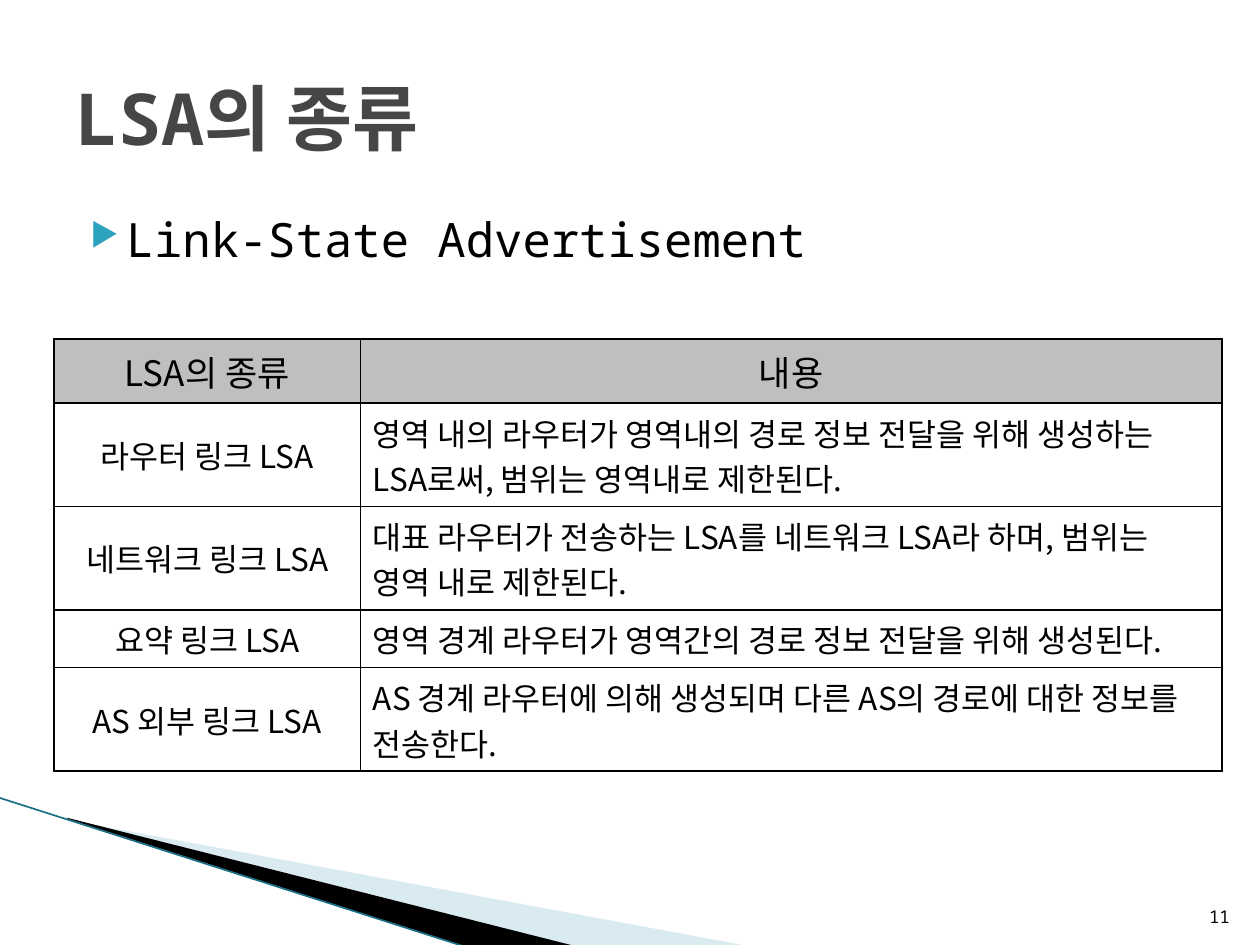
from lxml import etree
from pptx import Presentation
from pptx.dml.color import RGBColor
from pptx.enum.shapes import MSO_CONNECTOR
from pptx.enum.text import MSO_ANCHOR, PP_ALIGN
from pptx.oxml.ns import qn
from pptx.util import Inches, Pt

STRAIGHT = MSO_CONNECTOR.STRAIGHT
TOP, MIDDLE, BOTTOM = MSO_ANCHOR.TOP, MSO_ANCHOR.MIDDLE, MSO_ANCHOR.BOTTOM
LEFT, CENTER, RIGHT = PP_ALIGN.LEFT, PP_ALIGN.CENTER, PP_ALIGN.RIGHT

THEME = {
    "mono": "Noto Sans Mono", "korean": "Noto Sans CJK KR",
    "ink": "000000", "title": "464646", "bullet": "2DA2BF",
    "header": "BFBFBF", "paper": "FFFFFF", "pale": "A0CBDC", "edge": "1B7085",
    "title_size": 41, "body_size": 27, "header_size": 20, "cell_size": 18,
    "number_size": 10,
}

TITLE = "LSA의 종류"
BODY = "Link-State Advertisement"
PAGE_NUMBER = "11"
LSA_ROWS = [
    ("LSA의 종류", "내용"),
    ("라우터 링크 LSA",
     "영역 내의 라우터가 영역내의 경로 정보 전달을 위해 생성하는 LSA로써, 범위는 영역내로 제한된다."),
    ("네트워크 링크 LSA",
     "대표 라우터가 전송하는 LSA를 네트워크 LSA라 하며, 범위는 영역 내로 제한된다."),
    ("요약 링크 LSA",
     "영역 경계 라우터가 영역간의 경로 정보 전달을 위해 생성된다."),
    ("AS 외부 링크 LSA",
     "AS 경계 라우터에 의해 생성되며 다른 AS의 경로에 대한 정보를 전송한다."),
]
COLUMN_WIDTHS = (2.43, 6.84)
ROW_HEIGHTS = (0.51, 0.82, 0.82, 0.46, 0.82)
WEDGES = [
    ("pale", 40, [(0.55, 6.51), (5.95, 7.51), (4.56, 7.51), (0.55, 6.5)]),
    ("ink", 100, [(0.53, 6.49), (4.57, 7.51), (3.72, 7.52), (0.54, 6.5)]),
]


def color(name):
    return RGBColor.from_string(THEME[name])


def add_xml(parent, tag, **attributes):
    return etree.SubElement(parent, qn(tag), attributes)


def write(frame, text, font, size, ink="ink", bold=False, align=LEFT):
    frame.text = text
    paragraph = frame.paragraphs[0]
    paragraph.alignment = align
    for run in paragraph.runs:
        run.font.name = THEME[font]
        run.font.size = Pt(THEME[size])
        run.font.bold = bold
        run.font.color.rgb = color(ink)
        add_xml(run.font._element, "a:ea", typeface=THEME["korean"])
    return paragraph


def add_text(slide, box, anchor, *args, **kwargs):
    frame = slide.shapes.add_textbox(*map(Inches, box)).text_frame
    frame.word_wrap = True
    frame.vertical_anchor = anchor
    return write(frame, *args, **kwargs)


def add_bullet(paragraph):
    properties = paragraph._p.get_or_add_pPr()
    properties.set("marL", str(Inches(0.4)))
    properties.set("indent", str(Inches(-0.28)))
    tint = add_xml(properties, "a:buClr")
    add_xml(tint, "a:srgbClr", val=THEME["bullet"])
    add_xml(properties, "a:buSzPct", val="68000")
    add_xml(properties, "a:buChar", char="▶")


def add_wedge(slide, fill, opacity, points):
    corners = [(Inches(x), Inches(y)) for x, y in points]
    builder = slide.shapes.build_freeform(*corners[0])
    builder.add_line_segments(corners[1:], close=True)
    wedge = builder.convert_to_shape()
    wedge.shadow.inherit = False
    wedge.fill.solid()
    wedge.fill.fore_color.rgb = color(fill)
    wedge.line.fill.background()
    if opacity < 100:
        tint = wedge._element.spPr.find(".//" + qn("a:srgbClr"))
        add_xml(tint, "a:alpha", val=str(opacity * 1000))


def add_edge(slide):
    edge = slide.shapes.add_connector(
        STRAIGHT, Inches(-0.01), Inches(6.33), Inches(3.71), Inches(7.52))
    edge.line.color.rgb = color("edge")
    edge.line.width = Pt(0.95)
    add_xml(edge._element.spPr, "a:effectLst")


def style_cell(cell, fill):
    cell.vertical_anchor = MIDDLE
    properties = cell._tc.get_or_add_tcPr()
    for side in ("a:lnL", "a:lnR", "a:lnT", "a:lnB"):
        border = add_xml(properties, side, w=str(Pt(1)))
        add_xml(add_xml(border, "a:solidFill"), "a:srgbClr", val=THEME["ink"])
    cell.fill.solid()
    cell.fill.fore_color.rgb = color(fill)


def add_lsa_table(slide):
    table = slide.shapes.add_table(
        len(LSA_ROWS), len(COLUMN_WIDTHS), Inches(0.43), Inches(2.69),
        Inches(sum(COLUMN_WIDTHS)), Inches(sum(ROW_HEIGHTS))).table
    for column, width in zip(table.columns, COLUMN_WIDTHS):
        column.width = Inches(width)
    for r, (texts, height) in enumerate(zip(LSA_ROWS, ROW_HEIGHTS)):
        table.rows[r].height = Inches(height)
        for c, text in enumerate(texts):
            cell = table.cell(r, c)
            style_cell(cell, "paper" if r else "header")
            write(cell.text_frame, text, "korean",
                  "cell_size" if r else "header_size",
                  align=LEFT if r and c else CENTER)


def main():
    deck = Presentation()
    deck.slide_width, deck.slide_height = Inches(10), Inches(7.5)
    slide = deck.slides.add_slide(deck.slide_layouts[6])
    for wedge in WEDGES:
        add_wedge(slide, *wedge)
    add_edge(slide)
    add_bullet(add_text(slide, (0.5, 1.62, 9, 4.95), TOP,
                        BODY, "mono", "body_size"))
    add_text(slide, (0.5, 0.3, 9, 1.25), MIDDLE,
             TITLE, "mono", "title_size", ink="title", bold=True)
    add_lsa_table(slide)
    add_text(slide, (9.46, 7.01, 0.4, 0.4), BOTTOM,
             PAGE_NUMBER, "mono", "number_size", align=RIGHT)
    deck.save("out.pptx")


if __name__ == "__main__":
    main()
